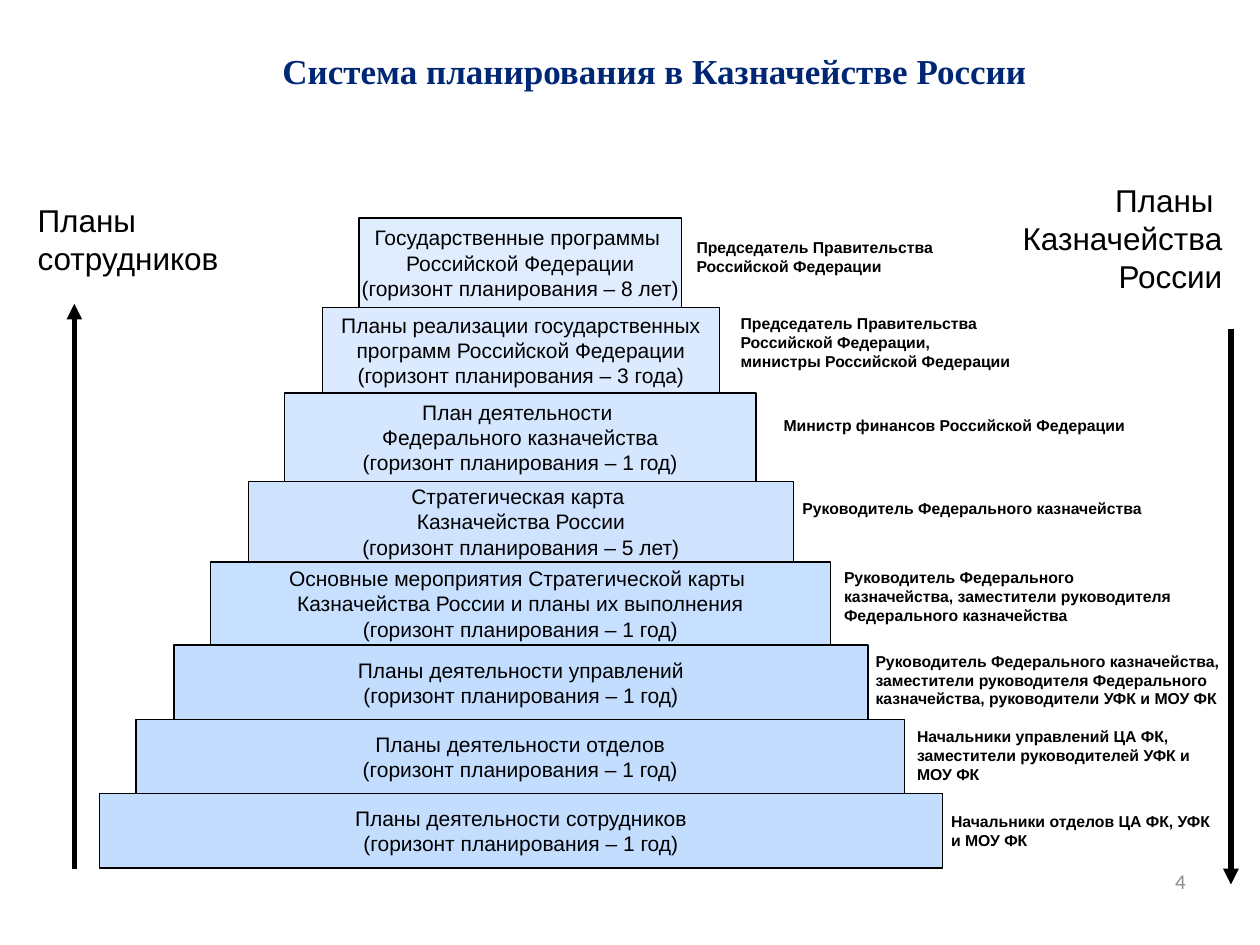
from copy import deepcopy

from pptx import Presentation
from pptx.dml.color import RGBColor
from pptx.enum.shapes import MSO_CONNECTOR, MSO_SHAPE
from pptx.enum.text import MSO_ANCHOR, MSO_AUTO_SIZE, PP_ALIGN
from pptx.oxml.ns import qn
from pptx.util import Emu, Pt

PX = 9144
BLACK = RGBColor(0x00, 0x00, 0x00)
BLUE = RGBColor(0xC3, 0xDD, 0xFF)
NAVY = RGBColor(0x00, 0x27, 0x76)
GRAY = RGBColor(0x8C, 0x8C, 0x8C)

MIDDLE = 413
TOP = 173
TIERS = [
    (71, 50, "Государственные программы \vРоссийской Федерации\n(горизонт планирования – 8 лет)"),
    (68, 60, "Планы реализации государственных\vпрограмм Российской Федерации\n"
             "(горизонт планирования – 3 года)"),
    (70, 70, "План деятельности \vФедерального казначейства\n(горизонт планирования – 1 год)"),
    (64, 80, "Стратегическая карта \nКазначейства России\n(горизонт планирования – 5 лет)"),
    (66, 90, "Основные мероприятия Стратегической карты \v"
             "Казначейства России и планы их выполнения\v(горизонт планирования – 1 год)"),
    (59, 100, "Планы деятельности управлений\n(горизонт планирования – 1 год)"),
    (59, 100, "Планы деятельности отделов\n(горизонт планирования – 1 год)"),
    (59, 100, "Планы деятельности сотрудников\n(горизонт планирования – 1 год)"),
]
NOTES = [
    (543, 184, 250, 40, "Председатель Правительства\nРоссийской Федерации"),
    (578, 244, 250, 56, "Председатель Правительства\nРоссийской Федерации, \v"
                        "министры Российской Федерации"),
    (612, 325, 311, 25, "Министр финансов Российской Федерации"),
    (627, 391, 306, 25, "Руководитель Федерального казначейства"),
    (660, 446, 281, 56, "Руководитель Федерального \vказначейства, заместители руководителя\n"
                        "Федерального казначейства"),
    (685, 512, 311, 56, "Руководитель Федерального казначейства, \v"
                        "заместители руководителя Федерального \v"
                        "казначейства, руководители УФК и МОУ ФК"),
    (718, 572, 259, 56, "Начальники управлений ЦА ФК,\nзаместители руководителей УФК и МОУ ФК"),
    (745, 639, 250, 40, "Начальники отделов ЦА ФК, УФК\nи МОУ ФК"),
]


def px(*nums):
    return [Emu(num * PX) for num in nums]


def write(shape, text, size=12, font="Arial", color=BLACK, bold=False,
          align=PP_ALIGN.LEFT, anchor=MSO_ANCHOR.TOP, wrap=True):
    frame = shape.text_frame
    frame.text = text
    frame.word_wrap = wrap
    frame.auto_size = MSO_AUTO_SIZE.NONE
    frame.vertical_anchor = anchor
    for para in frame.paragraphs:
        para.alignment = align
        for run in para.runs:
            run.font.size = Pt(size)
            run.font.name = font
            run.font.bold = bold
            run.font.color.rgb = color
        for gap in para._p.findall(qn("a:br")):
            gap.append(deepcopy(para.runs[0]._r.rPr))


class Deck:
    def __init__(self):
        self.show = Presentation()
        self.show.slide_width, self.show.slide_height = px(1000, 750)
        self.slide = self.show.slides.add_slide(self.show.slide_layouts[5])
        self.shapes = self.slide.shapes

    def title(self, box, text):
        head = self.shapes.title
        head.left, head.top, head.width, head.height = px(*box)
        write(head, text, size=20, font="Times New Roman", color=NAVY,
              bold=True, align=PP_ALIGN.CENTER)

    def label(self, box, text, **style):
        write(self.shapes.add_textbox(*px(*box)), text, **style)

    def tier(self, group, box, alpha, text):
        rect = group.shapes.add_shape(MSO_SHAPE.RECTANGLE, *px(*box))
        rect.shadow.inherit = False
        rect.fill.solid()
        rect.fill.fore_color.rgb = BLUE
        if alpha < 100:
            shade = rect._element.spPr.find(qn("a:solidFill"))[0]
            shade.makeelement(qn("a:alpha"), {})
            node = shade.makeelement(qn("a:alpha"), {"val": str(alpha * 1000)})
            shade.append(node)
        rect.line.color.rgb = BLACK
        rect.line.width = Pt(0.75)
        write(rect, text, align=PP_ALIGN.CENTER, anchor=MSO_ANCHOR.MIDDLE, wrap=False)

    def arrow(self, left, start, end):
        line = self.shapes.add_connector(MSO_CONNECTOR.STRAIGHT, *px(left, start, left, end))
        line.line.color.rgb = BLACK
        line.line.width = Pt(3)
        edge = line.line._get_or_add_ln()
        edge.append(edge.makeelement(qn("a:tailEnd"), {"type": "triangle"}))
        prop = line._element.spPr
        prop.append(prop.makeelement(qn("a:effectLst"), {}))


def main():
    deck = Deck()
    deck.title((156, 34, 727, 44), "Система планирования в Казначействе России")
    deck.arrow(59, 690, 241)
    deck.arrow(977, 261, 702)
    deck.label((20, 155, 189, 70), "Планы сотрудников", size=18)
    deck.label((799, 139, 181, 100), "Планы \vКазначейства России",
               size=18, align=PP_ALIGN.RIGHT)

    group = deck.shapes.add_group_shape()
    top = TOP
    for step, (high, alpha, text) in enumerate(TIERS):
        wide = 256 + 59 * step
        deck.tier(group, (MIDDLE - wide // 2, top, wide, high), alpha, text)
        top += high

    for *box, text in NOTES:
        deck.label(box, text, size=9, bold=True)

    deck.label((718, 679, 233, 40), "4", font="Calibri", color=GRAY,
               align=PP_ALIGN.RIGHT, anchor=MSO_ANCHOR.MIDDLE)
    deck.show.save("out.pptx")


if __name__ == "__main__":
    main()
